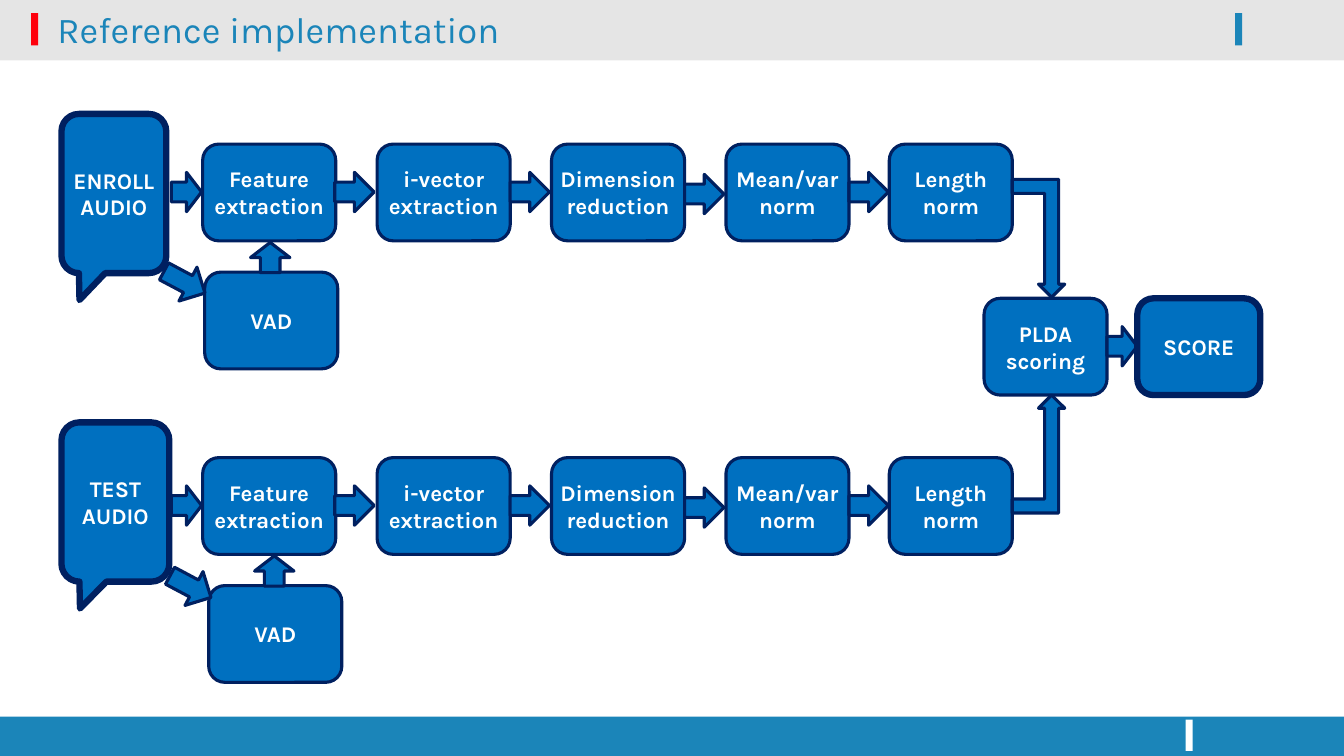
"""Draw the block diagram of a speaker verification system."""
from dataclasses import dataclass

from lxml import etree
from pptx import Presentation
from pptx import util as u
from pptx.dml.color import RGBColor
from pptx.enum import shapes, text
from pptx.oxml.ns import qn

PX = 9144
FONT = "Karla"
TEAL, BLUE, NAVY, WHITE = "1B85B9", "0070C0", "002060", "FFFFFF"
KIND = shapes.MSO_SHAPE
TOPS = (143, 454)


@dataclass(frozen=True)
class Bar:
    """A plain rectangle of the slide frame."""
    x: int
    y: int
    w: int
    h: int
    fill: str
    alpha: int = 100


@dataclass(frozen=True)
class Node:
    """An outlined block or arrow of the diagram."""
    x: int
    y: int
    w: int
    h: int
    label: str = ""
    kind: KIND = KIND.ROUNDED_RECTANGLE
    line: float = 2.25
    turn: int = 0
    flip: bool = False
    adj: tuple[float, ...] = ()


def color(code: str) -> RGBColor:
    """Turn a hex string into a colour."""
    return RGBColor.from_string(code)


def place(slide, kind: KIND, x: int, y: int, w: int, h: int, fill: str):
    """Add a filled shape without shadow."""
    shape = slide.shapes.add_shape(kind, x * PX, y * PX, w * PX, h * PX)
    shape.shadow.inherit = False
    shape.fill.solid()
    shape.fill.fore_color.rgb = color(fill)
    return shape


def write(para, words: str, size: int, fill: str, bold: bool) -> None:
    """Add one styled run to a paragraph."""
    run = para.add_run()
    run.text = words
    run.font.name = FONT
    run.font.size = u.Pt(size)
    run.font.bold = bold
    run.font.color.rgb = color(fill)


def draw_bar(slide, bar: Bar) -> None:
    """Draw a frame rectangle, see-through if asked."""
    shape = place(slide, KIND.RECTANGLE, bar.x, bar.y, bar.w, bar.h, bar.fill)
    shape.line.fill.background()
    if bar.alpha < 100:
        tint = shape._element.spPr.find(".//" + qn("a:srgbClr"))
        etree.SubElement(tint, qn("a:alpha"), val=str(bar.alpha * 1000))


def draw_node(slide, node: Node) -> None:
    """Draw a block or an arrow with its label."""
    shape = place(slide, node.kind, node.x, node.y, node.w, node.h, BLUE)
    shape.line.color.rgb = color(NAVY)
    shape.line.width = u.Pt(node.line)
    shape.rotation = node.turn
    for i, value in enumerate(node.adj):
        shape.adjustments[i] = value
    if node.flip:
        shape._element.spPr.find(qn("a:xfrm")).set("flipV", "1")
    if not node.label:
        return
    frame = shape.text_frame
    frame.word_wrap = False
    frame.vertical_anchor = text.MSO_ANCHOR.MIDDLE
    for i, words in enumerate(node.label.split("\n")):
        para = frame.add_paragraph() if i else frame.paragraphs[0]
        para.alignment = text.PP_ALIGN.CENTER
        write(para, words, 16, WHITE, True)


def draw_title(slide, words: str) -> None:
    """Write the heading in the top band."""
    box = slide.shapes.add_textbox(47 * PX, -11 * PX, 1060 * PX, 79 * PX)
    frame = box.text_frame
    frame.word_wrap = True
    frame.vertical_anchor = text.MSO_ANCHOR.MIDDLE
    write(frame.paragraphs[0], words, 26, TEAL, False)


def block(x: int, y: int, w: int, label: str, line: float = 2.25) -> Node:
    """Describe a rounded block."""
    return Node(x, y, w, 96, label, line=line)


def arrow(x: int, y: int, w: int, h: int = 39, turn: int = 0) -> Node:
    """Describe a straight arrow."""
    return Node(x, y, w, h, kind=KIND.RIGHT_ARROW, turn=turn)


def bend(y: int, flip: bool) -> Node:
    """Describe a bent arrow into the scoring block."""
    return Node(1004, y, 52, 117, kind=KIND.BENT_UP_ARROW, flip=flip,
                adj=(0.267, 0.25, 0.25))


def audio(y: int, w: int, label: str) -> Node:
    """Describe a speech callout."""
    return Node(61, y, w, 158, label, KIND.ROUNDED_RECTANGULAR_CALLOUT, 4.5,
                adj=(-0.328, 0.669, 0.167))


def chain(top: int) -> list[Node]:
    """Describe one row of processing steps and its arrows."""
    steps = [block(x, top, w, label) for x, w, label in (
        (201, 132, "Feature\nextraction"), (374, 132, "i-vector\nextraction"),
        (547, 132, "Dimension\nreduction"), (720, 122, "Mean/var\nnorm"),
        (882, 122, "Length\nnorm"))]
    links = [arrow(x, top + dy, w) for x, dy, w in (
        (170, 28, 30), (332, 28, 39), (506, 28, 39), (679, 30, 39),
        (842, 28, 39))]
    return steps + links


def detect(top: int, x: int) -> list[Node]:
    """Describe the voice activity block and its upward arrow."""
    return [block(x, top + 127, 132, "VAD"),
            arrow(x + 50, top + 93, 30, turn=270)]


BARS = (
    Bar(0, 56, 1333, 4, "000000", 10),
    Bar(0, 711, 1333, 39, TEAL),
    Bar(0, 0, 1333, 56, "000000", 10),
    Bar(31, 13, 7, 32, "FE000C"),
    Bar(1225, 13, 7, 32, TEAL),
    Bar(1176, 714, 7, 31, WHITE),
)
NODES = (
    *chain(TOPS[0]),
    block(976, 296, 122, "PLDA\nscoring"),
    bend(178, True),
    *chain(TOPS[1]),
    bend(392, False),
    arrow(1098, 324, 30),
    block(1128, 296, 122, "SCORE", 4.5),
    *detect(TOPS[0], 203),
    *detect(TOPS[1], 207),
    audio(419, 107, "TEST\nAUDIO"),
    audio(113, 104, "ENROLL\nAUDIO"),
    arrow(166, 563, 46, 38, 28),
    arrow(160, 261, 46, 38, 28),
)


def main() -> None:
    """Build and save the slide."""
    deck = Presentation()
    deck.slide_width, deck.slide_height = 1333 * PX, 750 * PX
    slide = deck.slides.add_slide(deck.slide_layouts[6])
    for bar in BARS:
        draw_bar(slide, bar)
    draw_title(slide, "Reference implementation")
    for node in NODES:
        draw_node(slide, node)
    deck.save("out.pptx")


if __name__ == "__main__":
    main()
